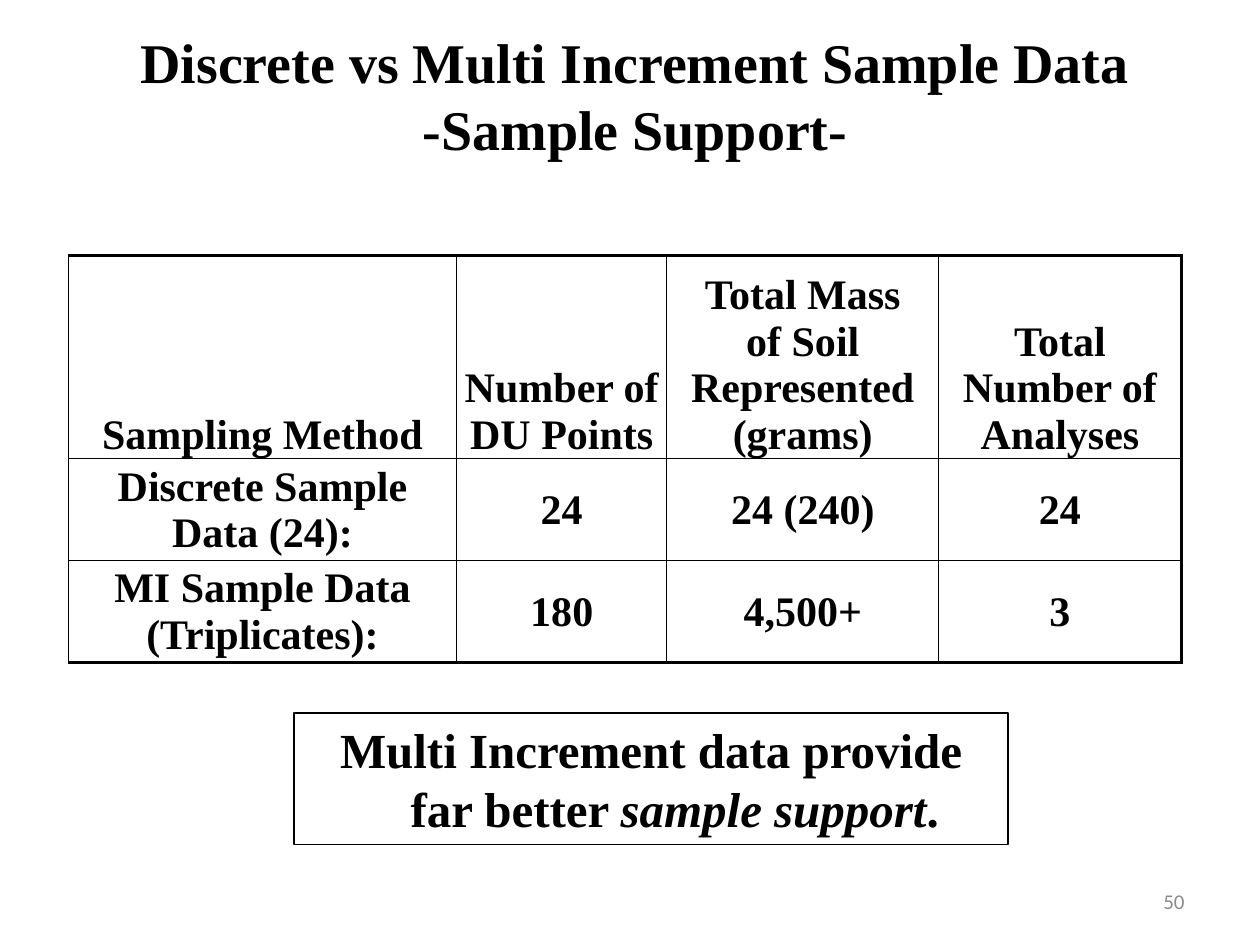
from dataclasses import dataclass

from pptx import Presentation
from pptx.dml.color import RGBColor
from pptx.enum.shapes import MSO_SHAPE as Shape
from pptx.enum.text import MSO_ANCHOR as Anchor, MSO_AUTO_SIZE as AutoSize, PP_ALIGN as Align
from pptx.oxml import parse_xml
from pptx.oxml.ns import nsdecls
from pptx.util import Pt


@dataclass(frozen=True)
class Theme:
    """Hold the colours, fonts, type sizes and line widths."""
    ink: str = "000000"
    muted: str = "8C8C8C"
    serif: str = "Times New Roman"
    sans: str = "Calibri"
    title: int = 32
    callout: int = 28
    table: int = 24
    number: int = 12
    thin: float = 0.5
    outline: float = 0.75
    thick: float = 2


def write_text(frame, text, *, size, font, color, bold=True, align=Align.CENTER,
               anchor=Anchor.TOP, leading=None, hanging=0):
    """Fill a frame; newlines part paragraphs, \\v breaks lines, asterisks mark italics."""
    frame.word_wrap = True
    frame.vertical_anchor = anchor
    for index, line in enumerate(text.split("\n")):
        paragraph = frame.add_paragraph() if index else frame.paragraphs[0]
        paragraph.alignment = align
        if leading:
            paragraph.line_spacing = Pt(leading)
        if hanging:
            properties = paragraph._p.get_or_add_pPr()
            properties.set("marL", str(Pt(hanging)))
            properties.set("indent", str(-Pt(hanging)))
        for position, piece in enumerate(line.split("*")):
            for row, words in enumerate(piece.split("\v")):
                if row:
                    paragraph.add_line_break()
                run = paragraph.add_run()
                run.text = words
                run.font.name, run.font.size = font, Pt(size)
                run.font.bold, run.font.italic = bold, position % 2 == 1
                run.font.color.rgb = RGBColor.from_string(color)


class SlideBuilder:
    """Carry the theme and the current slide."""

    def __init__(self, slide, theme):
        self.slide = slide
        self.theme = theme

    def title(self, text, box):
        """Place and write the title."""
        heading = self.slide.shapes.title
        heading.left, heading.top, heading.width, heading.height = map(Pt, box)
        heading.text_frame.auto_size = AutoSize.NONE
        write_text(heading.text_frame, text, size=self.theme.title, font=self.theme.serif,
                   color=self.theme.ink, leading=38.4)

    def border(self, cell, side, width):
        """Draw one side of a cell."""
        cell._tc.get_or_add_tcPr().append(parse_xml(
            f'<a:ln{side} {nsdecls("a")} w="{Pt(width)}"><a:solidFill>'
            f'<a:srgbClr val="{self.theme.ink}"/></a:solidFill></a:ln{side}>'))

    def table(self, rows, left, top, widths, heights):
        """Add a ruled table with heavy top, right and bottom edges."""
        theme = self.theme
        grid = self.slide.shapes.add_table(len(rows), len(widths), Pt(left), Pt(top),
                                           Pt(sum(widths)), Pt(sum(heights))).table
        grid.first_row = grid.horz_banding = False
        for column, width in zip(grid.columns, widths):
            column.width = Pt(width)
        for r, (values, height) in enumerate(zip(rows, heights)):
            grid.rows[r].height = Pt(height)
            for c, value in enumerate(values):
                cell = grid.cell(r, c)
                cell.margin_left = cell.margin_right = Pt(2)
                cell.margin_top, cell.margin_bottom = Pt(0.72), 0
                heavy = {"R": c == len(widths) - 1, "T": r == 0, "B": r == len(rows) - 1}
                for side in "LRTB":
                    self.border(cell, side, theme.thick if heavy.get(side) else theme.thin)
                cell.fill.background()
                anchor = Anchor.MIDDLE if r else Anchor.BOTTOM
                write_text(cell.text_frame, value, size=theme.table, font=theme.serif,
                           color=theme.ink, leading=26.6)
                cell.vertical_anchor = anchor

    def callout(self, text, box):
        """Add an outlined statement."""
        frame = self.slide.shapes.add_shape(Shape.RECTANGLE, *map(Pt, box))
        frame.shadow.inherit = False
        frame.fill.background()
        frame.line.color.rgb = RGBColor.from_string(self.theme.ink)
        frame.line.width = Pt(self.theme.outline)
        write_text(frame.text_frame, text, size=self.theme.callout, font=self.theme.serif,
                   color=self.theme.ink, leading=33.7, hanging=27)

    def page_number(self, text, box):
        """Add the page number."""
        number = self.slide.shapes.add_textbox(*map(Pt, box))
        write_text(number.text_frame, text, size=self.theme.number, font=self.theme.sans,
                   color=self.theme.muted, bold=False, align=Align.RIGHT, anchor=Anchor.MIDDLE)


def main():
    """Build and save the slide."""
    deck = Presentation()
    deck.slide_width, deck.slide_height = Pt(720), Pt(540)
    builder = SlideBuilder(deck.slides.add_slide(deck.slide_layouts[5]), Theme())
    builder.page_number("50", (516, 500.5, 168, 28.75))
    builder.title("Discrete vs Multi Increment Sample Data\n-Sample Support-",
                  (12, 12, 702, 85))
    sampling_rows = [
        ("Sampling Method", "Number of DU Points",
         "Total Mass\nof Soil Represented\v(grams)", "Total Number of Analyses"),
        ("Discrete Sample Data (24):", "24", "24 (240)", "24"),
        ("MI Sample Data\v(Triplicates):", "180", "4,500+", "3"),
    ]
    builder.table(sampling_rows, 39, 146, (222, 120, 155.5, 138.5), (116, 58.2, 58.2))
    builder.callout("Multi Increment data provide far better *sample support*.",
                    (168, 407.5, 408, 75))
    deck.save("out.pptx")


if __name__ == "__main__":
    main()
